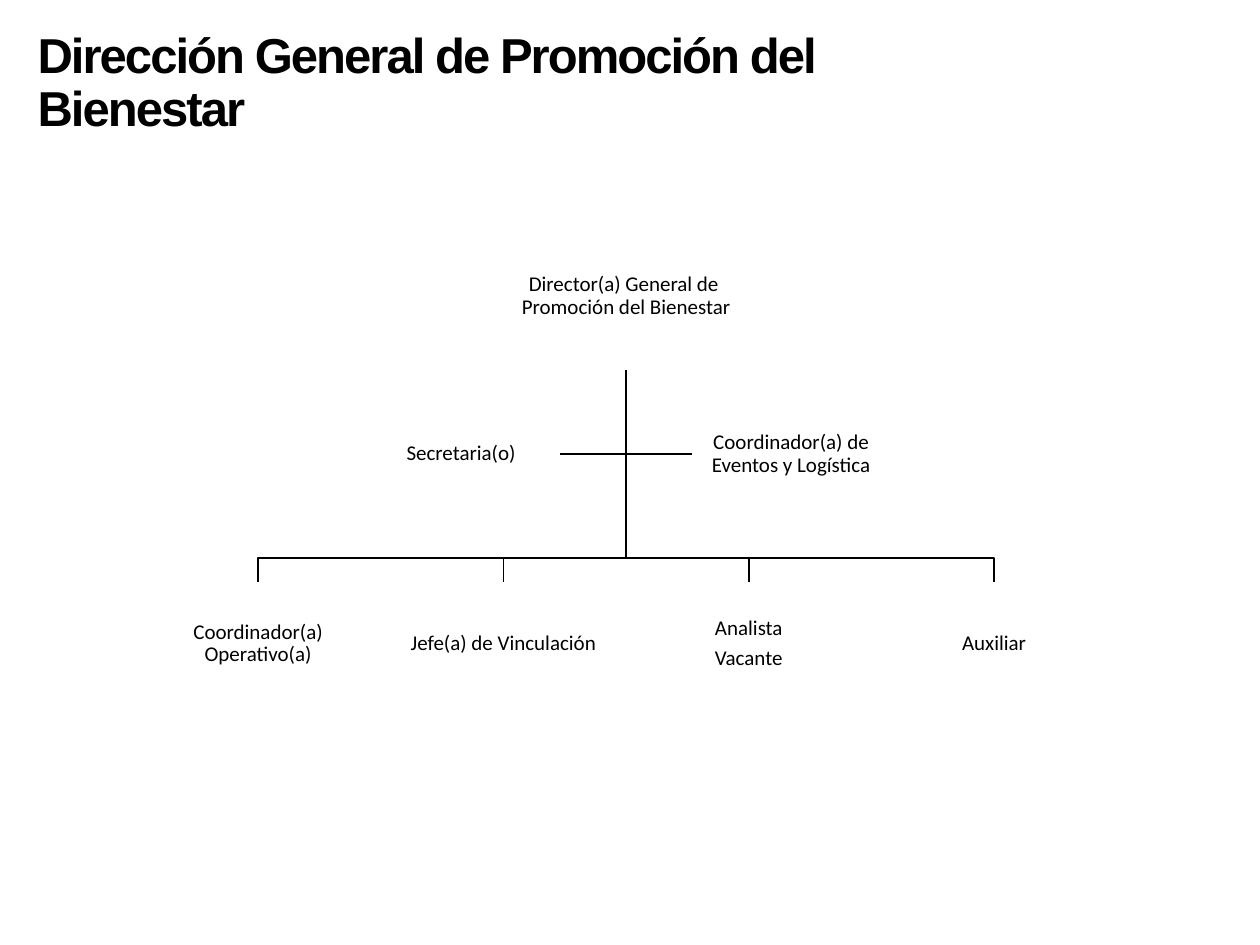
"""Build the organisation chart of the Dirección General de Promoción del Bienestar."""
from dataclasses import dataclass

from pptx import Presentation
from pptx.dml.color import RGBColor
from pptx.enum.shapes import MSO_SHAPE as Shape
from pptx.enum.text import MSO_ANCHOR as Anchor, PP_ALIGN as Align
from pptx.util import Pt


@dataclass(frozen=True)
class Theme:
    ink: RGBColor = RGBColor(0, 0, 0)
    paper: RGBColor = RGBColor(255, 255, 255)
    title_font: str = "Arial"
    body_font: str = "Calibri"
    title_size: float = 28
    body_size: float = 12
    line_width: float = 1


@dataclass(frozen=True)
class Post:
    text: str
    left: float
    top: float
    width: float
    height: float
    fill: bool = True


THEME = Theme()
AXIS = 357.8
DIRECTOR_BOTTOM, ASSIST_Y, BUS_Y, REPORT_TOP = 211.7, 259.5, 319, 332.6
ASSIST_GAP, ASSIST_W, ASSIST_H = 37.8, 113, 56.9
REPORT_PITCH, REPORT_W, REPORT_H = 140.2, 112.3, 70.6
REPORTS = ("Coordinador(a) Operativo(a)", "Jefe(a) de Vinculación",
           "Analista\nVacante", "Auxiliar")


def write(sp, text: str, *, font: str, size: float, bold: bool = False,
          align: Align = Align.LEFT, after: float = 0, tracking: float = 0) -> None:
    """Fill a shape with formatted paragraphs, one for each line of text."""
    tf = sp.text_frame
    tf.word_wrap = True
    for i, line in enumerate(text.split("\n")):
        p = tf.add_paragraph() if i else tf.paragraphs[0]
        p.text = line
        p.alignment, p.line_spacing, p.space_after = align, 0.9, Pt(after)
        for r in p.runs:
            f = r.font
            f.name, f.size, f.bold = font, Pt(size), bold
            f.color.rgb = THEME.ink
            if tracking:
                f._element.set("spc", str(round(tracking * 100)))


def draw_title(s, text: str) -> None:
    """Add the slide title."""
    sp = s.shapes.add_textbox(Pt(14.4), Pt(14.4), Pt(562.3), Pt(68.4))
    write(sp, text, font=THEME.title_font, size=THEME.title_size, bold=True, tracking=-1.1)


def draw_post(s, post: Post) -> None:
    """Draw one post as a box with centred text."""
    sp = s.shapes.add_shape(Shape.RECTANGLE, Pt(post.left), Pt(post.top),
                            Pt(post.width), Pt(post.height))
    sp.shadow.inherit = False
    sp.line.fill.background()
    if post.fill:
        sp.fill.solid()
        sp.fill.fore_color.rgb = THEME.paper
    else:
        sp.fill.background()
    tf = sp.text_frame
    tf.margin_left = tf.margin_right = tf.margin_top = tf.margin_bottom = Pt(0.6)
    tf.vertical_anchor = Anchor.MIDDLE
    write(sp, post.text, font=THEME.body_font, size=THEME.body_size,
          align=Align.CENTER, after=0.35 * THEME.body_size)


def draw_branch(s, *points: tuple[float, float]) -> None:
    """Draw an open elbow line through the points."""
    start, *rest = [(Pt(x), Pt(y)) for x, y in points]
    builder = s.shapes.build_freeform(*start)
    builder.add_line_segments(rest, close=False)
    sp = builder.convert_to_shape()
    sp.shadow.inherit = False
    sp.fill.background()
    sp.line.color.rgb = THEME.ink
    sp.line.width = Pt(THEME.line_width)


def main() -> None:
    """Build and save the slide."""
    prs = Presentation()
    prs.slide_width, prs.slide_height = Pt(720), Pt(540)
    s = prs.slides.add_slide(prs.slide_layouts[6])
    draw_title(s, "Dirección General de Promoción del Bienestar")

    centres = [AXIS + (i - (len(REPORTS) - 1) / 2) * REPORT_PITCH for i in range(len(REPORTS))]
    root = (AXIS, DIRECTOR_BOTTOM)
    for side in (1, -1):
        draw_branch(s, root, (AXIS, ASSIST_Y), (AXIS + side * ASSIST_GAP, ASSIST_Y))
    for x in reversed(centres):
        draw_branch(s, root, (AXIS, BUS_Y), (x, BUS_Y), (x, REPORT_TOP))

    assist_top = ASSIST_Y - ASSIST_H / 2
    posts = [
        Post("Director(a) General de \vPromoción del Bienestar",
             AXIS - 84.6, DIRECTOR_BOTTOM - 85, 169.2, 85, fill=False),
        *(Post(text, x - REPORT_W / 2, REPORT_TOP, REPORT_W, REPORT_H)
          for text, x in zip(REPORTS, centres)),
        Post("Secretaria(o)", AXIS - ASSIST_GAP - ASSIST_W, assist_top, ASSIST_W, ASSIST_H),
        Post("Coordinador(a) de Eventos y Logística",
             AXIS + ASSIST_GAP, assist_top, ASSIST_W, ASSIST_H),
    ]
    for post in posts:
        draw_post(s, post)
    prs.save("out.pptx")


if __name__ == "__main__":
    main()
